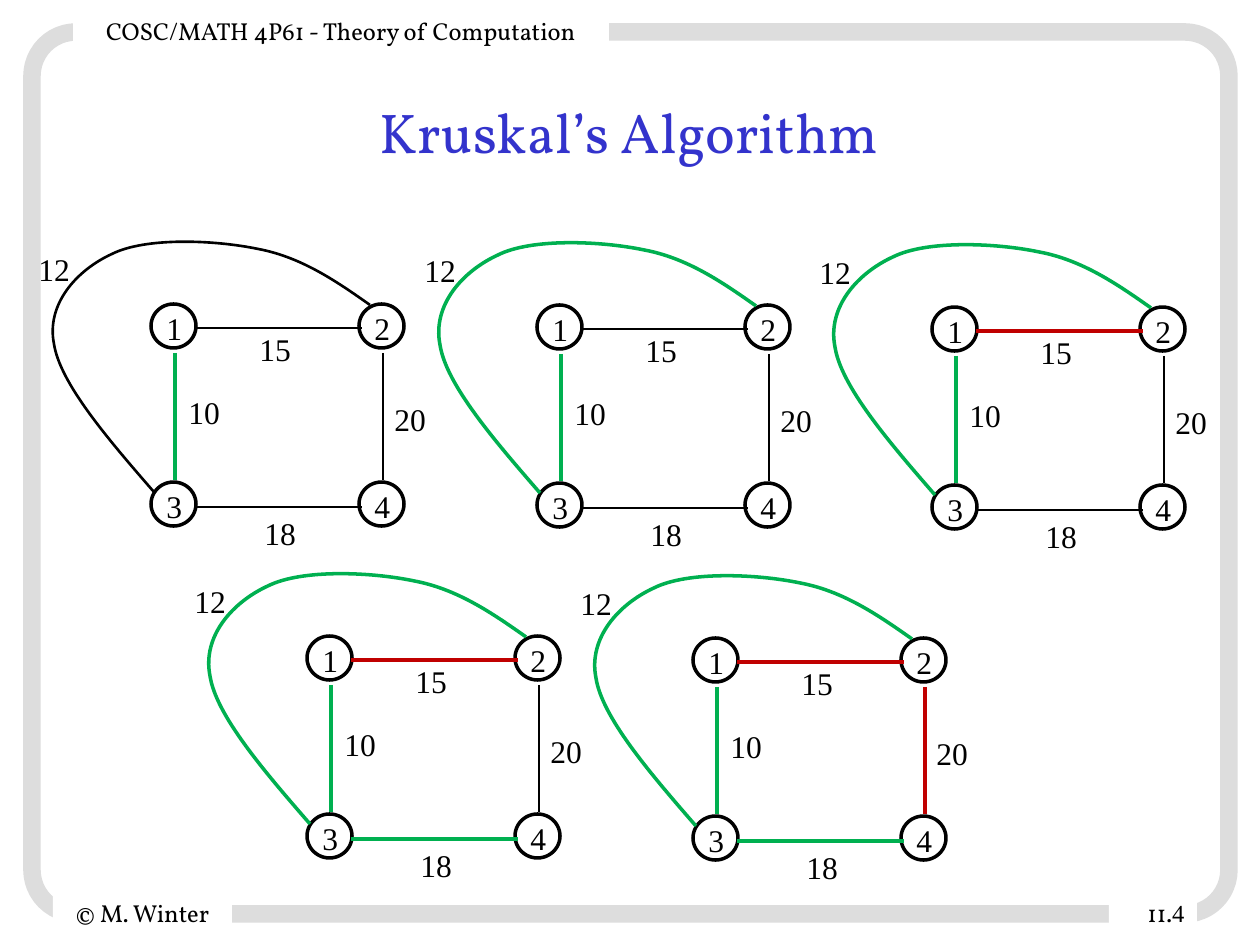
from lxml import etree
from pptx import Presentation
from pptx.dml.color import RGBColor
from pptx.enum.shapes import MSO_CONNECTOR, MSO_SHAPE
from pptx.enum.text import MSO_ANCHOR, MSO_AUTO_SIZE, PP_ALIGN
from pptx.oxml.ns import qn
from pptx.util import Pt

STRAIGHT, ELBOW = MSO_CONNECTOR.STRAIGHT, MSO_CONNECTOR.ELBOW
RECTANGLE, ROUNDED, OVAL = MSO_SHAPE.RECTANGLE, MSO_SHAPE.ROUNDED_RECTANGLE, MSO_SHAPE.OVAL
LEFT, CENTER, RIGHT = PP_ALIGN.LEFT, PP_ALIGN.CENTER, PP_ALIGN.RIGHT
MIDDLE = MSO_ANCHOR.MIDDLE
FIT_SHAPE = MSO_AUTO_SIZE.SHAPE_TO_FIT_TEXT

EMU_PER_PX = 914400 / 126
SERIF, DISPLAY = "Times New Roman", "Vollkorn"
BLACK, WHITE, GREY, BLUE = "000000", "FFFFFF", "DDDDDD", "3333CC"
GREEN, RED = "00B050", "C00000"

NODES = {"1": (0, 0), "4": (208, 178), "2": (208, 0), "3": (0, 178)}
EDGES = {
    "20": (ELBOW, (232, 49), (232, 176)),
    "15": (STRAIGHT, (44, 24), (211, 24)),
    "10": (STRAIGHT, (24, 49), (24, 176)),
    "18": (STRAIGHT, (44, 203), (211, 203)),
}
ARC_WEIGHT = "12"
ARC = [
    (219, 1),
    (185, -23), (150, -47), (107, -55),
    (64, -64), (-5, -67), (-39, -50),
    (-74, -34), (-105, 0), (-97, 40),
    (-91, 79), (-44, 134), (3, 188),
]
WEIGHT_OFFSETS = {
    "15": (96, 20), "12": (-125, -60), "10": (25, 83), "20": (231, 90), "18": (101, 204),
}
STEPS = [
    ((151, 304), {"10": GREEN}),
    ((537, 305), {"10": GREEN, "12": GREEN}),
    ((932, 307), {"10": GREEN, "12": GREEN, "15": RED}),
    ((307, 636), {"10": GREEN, "12": GREEN, "15": RED, "18": GREEN}),
    ((693, 638), {"10": GREEN, "12": GREEN, "15": RED, "18": GREEN, "20": RED}),
]
CAPTIONS = [
    ((53, 892, 179, 42), CENTER, [("© M. Winter", DISPLAY)]),
    ((73, 10, 536, 42), CENTER, [("COSC/MATH 4P61 - Theory of Computation", DISPLAY)]),
    ((1109, 892, 88, 42), RIGHT, [("11.", DISPLAY), ("4", SERIF)]),
]


def px(*lengths):
    """Convert pixel lengths to EMU."""
    return [round(length * EMU_PER_PX) for length in lengths]


def color(hex_code):
    """Turn a hex string into a colour."""
    return RGBColor.from_string(hex_code)


def set_line(line, hex_code, width):
    """Give a line its colour and width in points."""
    line.color.rgb = color(hex_code)
    line.width = Pt(width)


def write_runs(paragraph, runs, size, hex_code, align):
    """Add (text, font) runs to a paragraph."""
    paragraph.alignment = align
    for text, font_name in runs:
        run = paragraph.add_run()
        run.text = text
        run.font.name = font_name
        run.font.size = Pt(size)
        run.font.color.rgb = color(hex_code)


def add_outline(shapes, preset, box, hex_code, width):
    """Add an unfilled preset shape."""
    outline = shapes.add_shape(preset, *px(*box))
    outline.shadow.inherit = False
    outline.fill.background()
    set_line(outline.line, hex_code, width)
    return outline


def add_caption(shapes, box, align, runs):
    """Add a white strip of text that interrupts the frame."""
    strip = shapes.add_shape(RECTANGLE, *px(*box))
    strip.shadow.inherit = False
    strip.fill.solid()
    strip.fill.fore_color.rgb = color(WHITE)
    strip.line.fill.background()
    strip.text_frame.vertical_anchor = MIDDLE
    write_runs(strip.text_frame.paragraphs[0], runs, 14, BLACK, align)


def add_label(shapes, text, left, top, width):
    """Add a node number or an edge weight."""
    frame = shapes.add_textbox(*px(left, top, width, 50)).text_frame
    frame.word_wrap = True
    frame.auto_size = FIT_SHAPE
    write_runs(frame.paragraphs[0], [(text, SERIF)], 18, BLACK, LEFT)


def add_edge(shapes, route, start, end, hex_code, width):
    """Connect two points."""
    edge = shapes.add_connector(route, *px(*start, *end))
    set_line(edge.line, hex_code, width)
    etree.SubElement(edge._element.spPr, qn("a:effectLst"))


def add_arc(shapes, points, hex_code, width):
    """Draw an open chain of cubic curves through the control points."""
    start, *controls = [tuple(px(*point)) for point in points]
    builder = shapes.build_freeform(*start)
    builder.add_line_segments(controls, close=False)
    arc = builder.convert_to_shape()
    segments = list(arc._element.iter(qn("a:lnTo")))
    for first in range(0, len(segments), 3):
        curve = etree.Element(qn("a:cubicBezTo"))
        segments[first].addprevious(curve)
        for segment in segments[first:first + 3]:
            curve.append(segment[0])
            segment.getparent().remove(segment)
    arc.shadow.inherit = False
    arc.fill.background()
    set_line(arc.line, hex_code, width)


def add_graph(slide, origin, decided):
    """Draw the weighted graph with its decided edges coloured."""
    shapes = slide.shapes.add_group_shape().shapes

    def place(offset):
        return origin[0] + offset[0], origin[1] + offset[1]

    def stroke(weight):
        return decided.get(weight, BLACK), 2 if weight in decided else 1.5

    for number, offset in NODES.items():
        left, top = place(offset)
        add_outline(shapes, OVAL, (left, top, 45, 44), BLACK, 2)
        add_label(shapes, number, left + 3, top - 1, 42)
    for weight, (route, start, end) in EDGES.items():
        add_edge(shapes, route, place(start), place(end), *stroke(weight))
    add_arc(shapes, [place(point) for point in ARC], *stroke(ARC_WEIGHT))
    for weight, offset in WEIGHT_OFFSETS.items():
        add_label(shapes, weight, *place(offset), 63)


def set_title(slide, text):
    """Place and format the slide title."""
    title = slide.shapes.title
    title.left, title.top, title.width, title.height = px(94, 84, 1071, 94)
    title.text_frame.vertical_anchor = MIDDLE
    write_runs(title.text_frame.paragraphs[0], [(text, DISPLAY)], 32, BLUE, CENTER)


def main():
    """Build and save the slide."""
    presentation = Presentation()
    presentation.slide_width, presentation.slide_height = px(1260, 945)
    slide = presentation.slides.add_slide(presentation.slide_layouts[5])
    frame = add_outline(slide.shapes, ROUNDED, (32, 32, 1197, 882), GREY, 10)
    frame.adjustments[0] = 0.05
    for box, align, runs in CAPTIONS:
        add_caption(slide.shapes, box, align, runs)
    set_title(slide, "Kruskal’s Algorithm")
    for origin, decided in STEPS:
        add_graph(slide, origin, decided)
    presentation.save("out.pptx")


if __name__ == "__main__":
    main()
